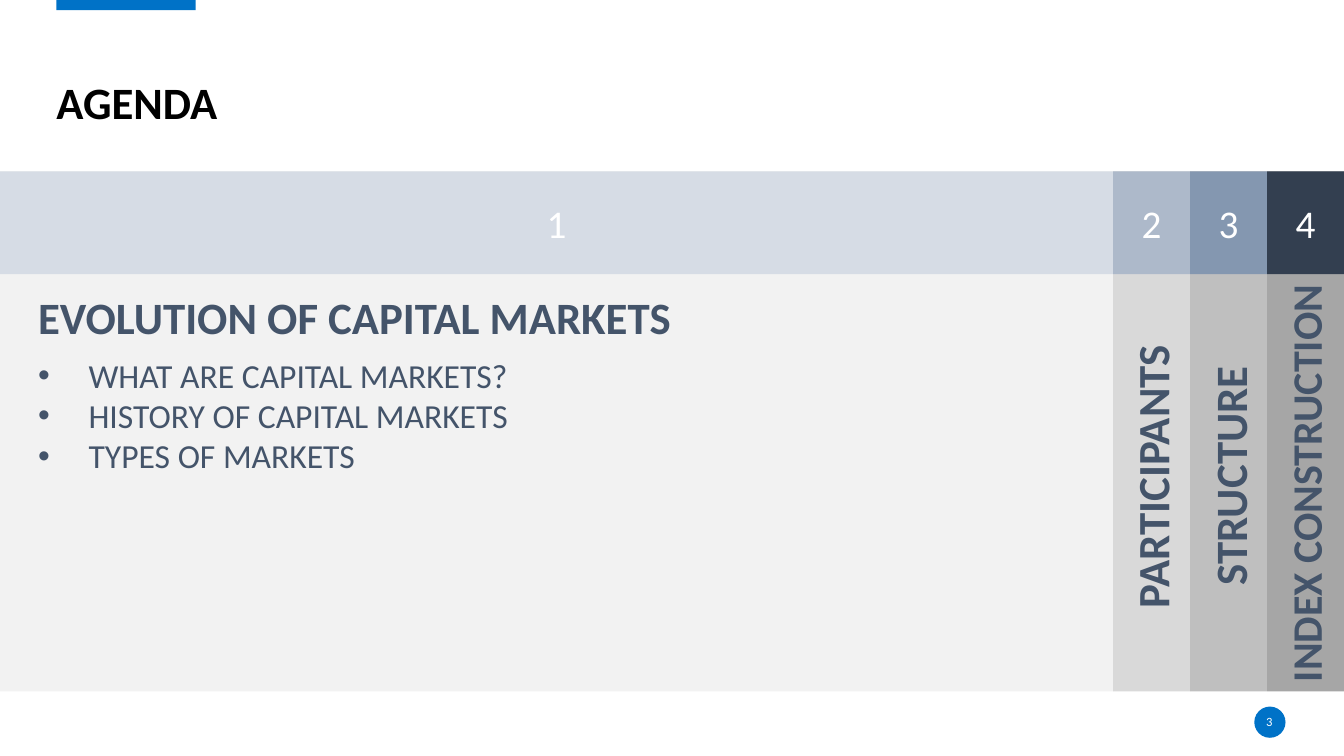
"""Build the agenda slide with one open section and three collapsed ones."""
import lxml.etree
import pptx
import pptx.dml.color
import pptx.enum.shapes
import pptx.enum.text
import pptx.oxml.ns
import pptx.util

Inches = pptx.util.Inches
RGBColor = pptx.dml.color.RGBColor
MSO_SHAPE = pptx.enum.shapes.MSO_SHAPE
MSO_ANCHOR = pptx.enum.text.MSO_ANCHOR
PP_ALIGN = pptx.enum.text.PP_ALIGN

BLACK = RGBColor(0x00, 0x00, 0x00)
WHITE = RGBColor(0xFF, 0xFF, 0xFF)
BLUE = RGBColor(0x00, 0x72, 0xC7)
SLATE = RGBColor(0x44, 0x54, 0x6A)
BODY_COLORS = [RGBColor(0xF2, 0xF2, 0xF2), RGBColor(0xD9, 0xD9, 0xD9),
               RGBColor(0xBF, 0xBF, 0xBF), RGBColor(0xA6, 0xA6, 0xA6)]
HEADER_COLORS = [RGBColor(0xD6, 0xDC, 0xE5), RGBColor(0xAD, 0xB9, 0xCA),
                 RGBColor(0x84, 0x97, 0xB0), RGBColor(0x33, 0x3F, 0x50)]

SLIDE_WIDTH, OPEN_WIDTH = 13.33, 11.04
TAB_WIDTH = (SLIDE_WIDTH - OPEN_WIDTH) / 3
PANEL_TOP, PANEL_HEIGHT, HEADER_HEIGHT = 1.7, 5.16, 1.02

presentation = pptx.Presentation()
presentation.slide_width = Inches(SLIDE_WIDTH)
presentation.slide_height = Inches(7.5)
slide = presentation.slides.add_slide(presentation.slide_layouts[5])


def add_block(kind, left, top, width, height, color):
    shape = slide.shapes.add_shape(kind, Inches(left), Inches(top), Inches(width), Inches(height))
    shape.shadow.inherit = False
    shape.fill.solid()
    shape.fill.fore_color.rgb = color
    shape.line.fill.background()
    return shape


def write(shape, lines, size, color, bold=False, alignment=PP_ALIGN.LEFT, anchor=MSO_ANCHOR.TOP):
    frame = shape.text_frame
    frame.word_wrap = True
    frame.vertical_anchor = anchor
    for index, line in enumerate(lines):
        paragraph = frame.add_paragraph() if index else frame.paragraphs[0]
        paragraph.alignment = alignment
        run = paragraph.add_run()
        run.text = line
        run.font.name = "Calibri"
        run.font.size = pptx.util.Pt(size)
        run.font.bold = bold
        run.font.color.rgb = color
    return frame


add_block(MSO_SHAPE.RECTANGLE, 0.56, -0.02, 1.38, 0.12, BLUE)
add_block(MSO_SHAPE.OVAL, 12.44, 7.01, 0.31, 0.31, BLUE)

title = slide.shapes.title
title.left, title.top, title.width, title.height = Inches(0.56), Inches(0.27), Inches(12.19), Inches(1.01)
title_frame = write(title, ["AGENDA"], 32, BLACK, bold=True, anchor=MSO_ANCHOR.BOTTOM)
title_frame.paragraphs[0].line_spacing = 0.9

page_number = slide.shapes.add_textbox(Inches(12.43), Inches(7.06), Inches(0.32), Inches(0.2))
number_frame = write(page_number, ["3"], 9, WHITE, alignment=PP_ALIGN.CENTER, anchor=MSO_ANCHOR.MIDDLE)

for frame in (title_frame, number_frame):
    frame.margin_left = frame.margin_top = frame.margin_right = frame.margin_bottom = 0

for index, (body_color, header_color) in enumerate(zip(BODY_COLORS, HEADER_COLORS)):
    left = OPEN_WIDTH + (index - 1) * TAB_WIDTH if index else 0
    width = TAB_WIDTH if index else OPEN_WIDTH
    add_block(MSO_SHAPE.RECTANGLE, left, PANEL_TOP, width, PANEL_HEIGHT, body_color)
    header = add_block(MSO_SHAPE.RECTANGLE, left, PANEL_TOP, width, HEADER_HEIGHT, header_color)
    write(header, [str(index + 1)], 28, WHITE, alignment=PP_ALIGN.CENTER, anchor=MSO_ANCHOR.MIDDLE)

headings = [
    ("EVOLUTION OF CAPITAL MARKETS", 0.28, 2.83, 7.22, 0.64, 32, 0),
    ("PARTICIPANTS", 9.93, 4.32, 2.99, 0.64, 32, 270),
    ("STRUCTURE", 10.7, 4.09, 2.99, 0.64, 32, 270),
    ("INDEX CONSTRUCTION", 10.37, 3.98, 5.16, 0.61, 30, 270),
]
for text, left, top, width, height, size, rotation in headings:
    heading = slide.shapes.add_textbox(Inches(left), Inches(top), Inches(width), Inches(height))
    heading.rotation = rotation
    write(heading, [text], size, SLATE, bold=True)

topics = slide.shapes.add_textbox(Inches(0.28), Inches(3.47), Inches(7.22), Inches(1.31))
topics_frame = write(topics, ["WHAT ARE CAPITAL MARKETS?", "HISTORY OF CAPITAL MARKETS",
                              "TYPES OF MARKETS"], 24, SLATE)
for paragraph in topics_frame.paragraphs:
    properties = paragraph._p.get_or_add_pPr()
    properties.set("marL", str(Inches(0.5)))
    properties.set("indent", str(Inches(-0.5)))
    lxml.etree.SubElement(properties, pptx.oxml.ns.qn("a:buFont")).set("typeface", "Arial")
    lxml.etree.SubElement(properties, pptx.oxml.ns.qn("a:buChar")).set("char", "•")

presentation.save("out.pptx")
